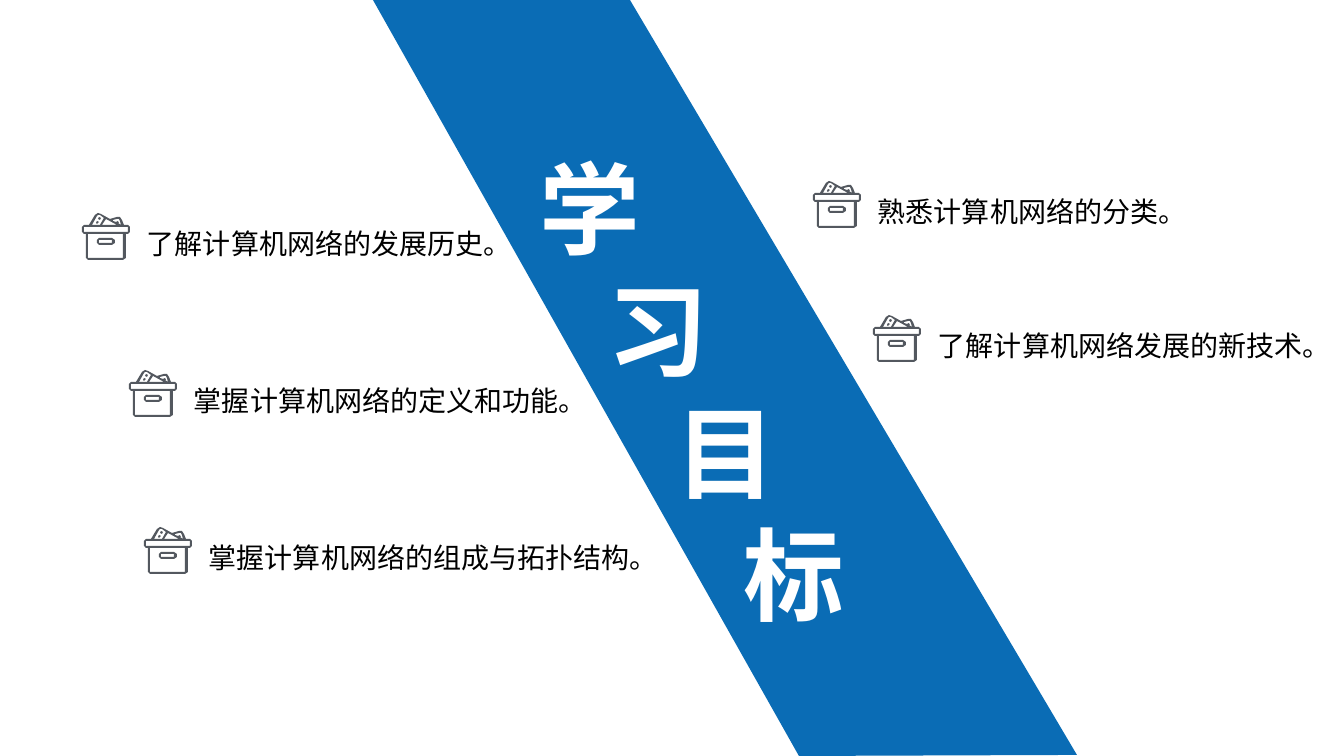
from dataclasses import dataclass
from lxml import etree
from pptx import Presentation
from pptx.dml.color import RGBColor
from pptx.enum.text import MSO_ANCHOR, MSO_AUTO_SIZE, PP_ALIGN
from pptx.oxml.ns import qn
from pptx.util import Pt

SCALE = 914400 / 100.8
WIDE, HIGH = 1344, 756
LEFT = PP_ALIGN.LEFT
TOP, MIDDLE = MSO_ANCHOR.TOP, MSO_ANCHOR.MIDDLE
FIXED = MSO_AUTO_SIZE.NONE


@dataclass(frozen=True)
class Theme:
    blue: RGBColor = RGBColor(0x0A, 0x6C, 0xB5)
    grey: RGBColor = RGBColor(0x53, 0x58, 0x5F)
    white: RGBColor = RGBColor(0xFF, 0xFF, 0xFF)
    black: RGBColor = RGBColor(0, 0, 0)
    head: int = 72
    pitch: int = 87
    item: int = 20
    latin: str = "Times New Roman"
    asian: str = "Noto Sans CJK SC"


THEME = Theme()
TITLE = "学习目标"
STEP = 68
BAND = [[(373, 0), (630, 0), (1077, 755), (799, 756)]]
GOALS = [
    (82, 213, "了解计算机网络的发展历史。"),
    (129, 370, "掌握计算机网络的定义和功能。"),
    (144, 527, "掌握计算机网络的组成与拓扑结构。"),
    (813, 181, "熟悉计算机网络的分类。"),
    (873, 315, "了解计算机网络发展的新技术。"),
]

OUTER = [(46, 12), (42, 12), (40, 7), (38, 4), (35, 4), (28, 6), (19, 1),
         (16, 0), (13, 2), (7, 12), (2, 12), (0, 14), (0, 19), (2, 21),
         (4, 21), (4, 45), (6, 47), (41, 47), (44, 45), (44, 21),
         (46, 21), (48, 19), (48, 14)]
LID = [(46, 19), (2, 19), (2, 14), (46, 14)]
BODY = [(41, 45), (6, 45), (6, 21), (41, 21)]
CARD = [(15, 3), (16, 2), (18, 2), (22, 5), (18, 12), (10, 12)]
DOTS = [[(17, 9), (15, 8), (14, 10), (15, 11)],
        [(19, 5), (17, 4), (16, 6), (18, 7)]]
PAPER = [(35, 12), (20, 12), (24, 6)]
LEAF = [(35, 6), (37, 6), (38, 8), (39, 12), (36, 10), (37, 10), (36, 8),
        (34, 9), (31, 8), (31, 7)]
RIM = [(17, 32), (30, 32), (33, 30), (33, 27), (30, 25), (17, 25),
       (15, 27), (15, 30)]
SLOT = [(17, 27), (30, 27), (30, 30), (17, 30)]
ICON = [OUTER, LID, BODY, CARD, *DOTS, PAPER, LEAF, RIM, SLOT]


def px(num):
    return round(num * SCALE)


def apply(obj, **vals):
    for key, val in vals.items():
        setattr(obj, key, val)


def style(run, latin, size, color, bold):
    apply(run.font, name=latin, size=Pt(size), bold=bold)
    run.font.color.rgb = color
    asian = etree.SubElement(run.font._element, qn("a:ea"))
    asian.set("typeface", THEME.asian)


def draw(shapes, rings, x, y, color):
    pen = shapes.build_freeform(*rings[0][0], scale=SCALE)
    pen.add_line_segments(rings[0][1:], close=True)
    for ring in rings[1:]:
        pen.move_to(*ring[0])
        pen.add_line_segments(ring[1:], close=True)
    shape = pen.convert_to_shape(px(x), px(y))
    shape.shadow.inherit = False
    shape.fill.solid()
    shape.fill.fore_color.rgb = color
    shape.line.fill.background()
    return shape


def banner(slide, x, y, w, h):
    title = slide.shapes.title
    apply(title, left=px(x), top=px(y), width=px(w), height=px(h))
    frame = title.text_frame
    apply(frame, word_wrap=True, auto_size=FIXED, vertical_anchor=TOP,
          margin_left=px(10), margin_right=px(10),
          margin_top=px(12), margin_bottom=0)
    for num, char in enumerate(TITLE):
        para = frame.add_paragraph() if num else frame.paragraphs[0]
        apply(para, alignment=LEFT, line_spacing=Pt(THEME.pitch))
        props = para._p.get_or_add_pPr()
        props.set("marL", str(px(num * STEP)))
        props.set("indent", "0")
        run = para.add_run()
        run.text = char
        style(run, THEME.asian, THEME.head, THEME.white, True)
    band = draw(slide.shapes, BAND, 0, 0, THEME.blue)
    title._element.addprevious(band._element)


def goal(slide, x, y, text):
    group = slide.shapes.add_group_shape()
    box = group.shapes.add_textbox(
        px(x + 55), px(y + 8), px(len(text) * 28 + 24), px(44))
    frame = box.text_frame
    apply(frame, word_wrap=False, auto_size=FIXED, vertical_anchor=MIDDLE)
    run = frame.paragraphs[0].add_run()
    run.text = text
    style(run, THEME.latin, THEME.item, THEME.black, False)
    draw(group.shapes, ICON, x, y, THEME.grey)


def main():
    deck = Presentation()
    apply(deck, slide_width=px(WIDE), slide_height=px(HIGH))
    slide = deck.slides.add_slide(deck.slide_layouts[5])
    banner(slide, 530, 134, 615, 499)
    for x, y, text in GOALS:
        goal(slide, x, y, text)
    deck.save("out.pptx")


if __name__ == "__main__":
    main()
